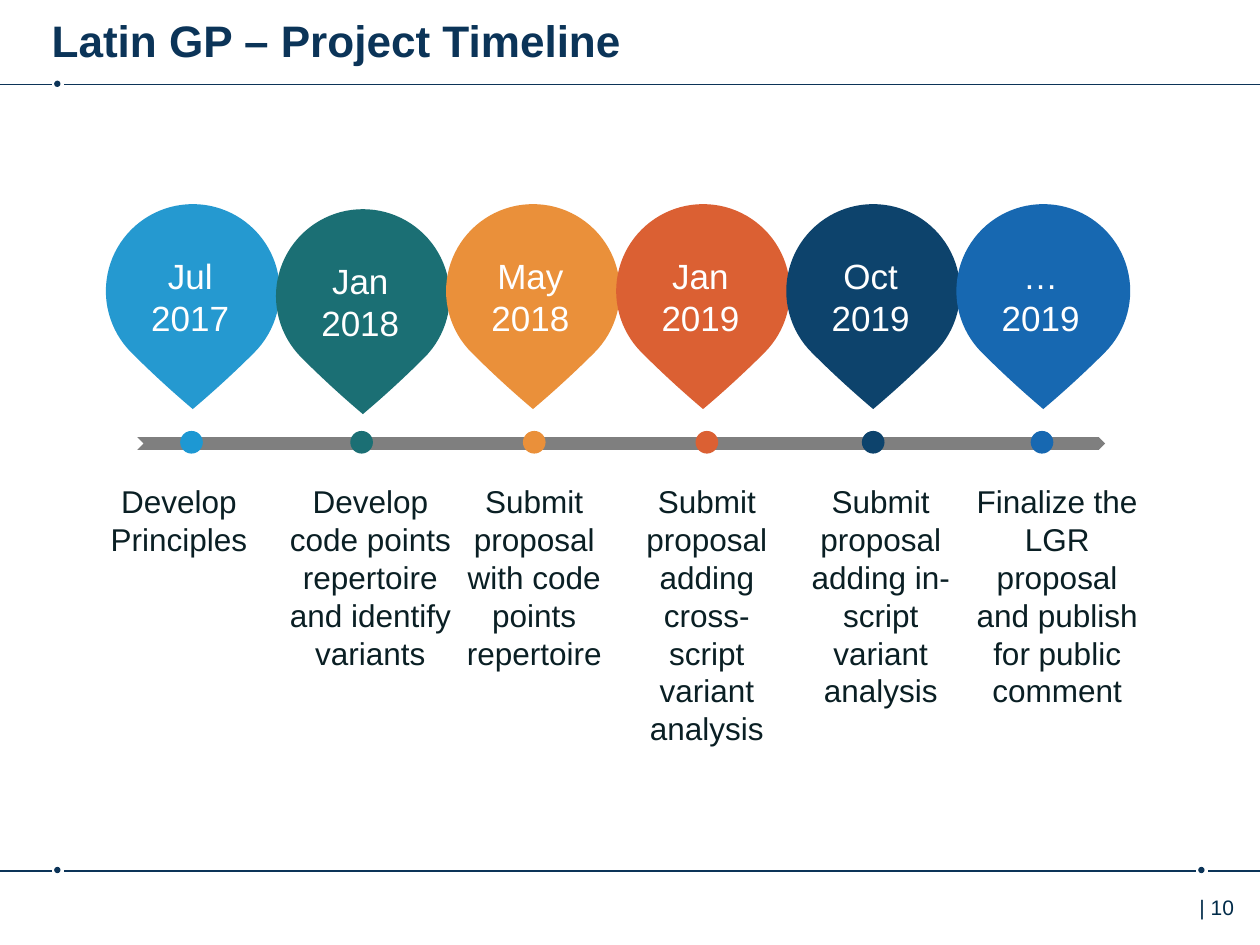
"""Builds the Latin GP project timeline slide."""
from lxml import etree
from pptx import Presentation
from pptx.dml.color import RGBColor
from pptx.enum.shapes import MSO_CONNECTOR, MSO_SHAPE
from pptx.enum.text import MSO_ANCHOR, MSO_AUTO_SIZE, PP_ALIGN
from pptx.oxml.ns import qn
from pptx.util import Inches, Pt

OVAL, DROP, BAR = MSO_SHAPE.OVAL, MSO_SHAPE.TEAR, MSO_SHAPE.CHEVRON
LINE = MSO_CONNECTOR.STRAIGHT
LEFT, MID = PP_ALIGN.LEFT, PP_ALIGN.CENTER
TOP, FIXED = MSO_ANCHOR.TOP, MSO_AUTO_SIZE.NONE
WIDE, HIGH = 10, 7.5
NAVY, INK = "0C3458", "0A1F24"
PIN, STEP, START = 1.38, 1.35, 0.84
DOT = 0.18

# month, year, pin fill, dot fill, pin top, dot left, label left, label width, label
STAGES = [
    ("Jul", "2017", "2599D0", "1D98D3", 1.62, 1.43, 0.66, 1.52,
     "Develop Principles"),
    ("Jan", "2018", "1B6F74", "1B6F74", 1.66, 2.78, 2.16, 1.56,
     "Develop code points repertoire and identify variants"),
    ("May", "2018", "EA903A", "EA903A", 1.62, 4.15, 3.59, 1.3,
     "Submit proposal with code points repertoire"),
    ("Jan", "2019", "DB6033", "DB6033", 1.62, 5.52, 4.96, 1.3,
     "Submit proposal adding cross-script variant analysis"),
    ("Oct", "2019", "0D436C", "0D436C", 1.62, 6.84, 6.34, 1.3,
     "Submit proposal adding in-script variant analysis"),
    ("…", "2019", "1768B1", "1768B1", 1.62, 8.18, 7.63, 1.52,
     "Finalize the LGR proposal and publish for public comment"),
]


def tint(code):
    """Turn a hex string into a colour."""
    return RGBColor.from_string(code)


def place(item, x, y, w, h):
    """Set position and size in inches."""
    item.left, item.top = Inches(x), Inches(y)
    item.width, item.height = Inches(w), Inches(h)


def write(frame, text, size=18, color=INK, bold=False, align=MID, side=0.09):
    """Fill a text frame, one paragraph per line of text."""
    frame.word_wrap, frame.auto_size = True, FIXED
    frame.vertical_anchor = TOP
    frame.margin_left = frame.margin_right = Inches(side)
    frame.margin_top = frame.margin_bottom = Inches(0.05)
    frame.text = text
    for para in frame.paragraphs:
        para.alignment = align
        para.line_spacing = Pt(round(size * 1.2, 1))
        font = para.runs[0].font
        font.name, font.size, font.bold = "Arial", Pt(size), bold
        font.color.rgb = tint(color)


def label(slide, text, x, y, w, h, **style):
    """Add a text box."""
    box = slide.shapes.add_textbox(Inches(x), Inches(y), Inches(w), Inches(h))
    write(box.text_frame, text, **style)


def shape(slide, kind, x, y, w, h, fill):
    """Add a plain filled shape."""
    item = slide.shapes.add_shape(
        kind, Inches(x), Inches(y), Inches(w), Inches(h))
    item.shadow.inherit = False
    item.fill.solid()
    item.fill.fore_color.rgb = tint(fill)
    item.line.fill.background()
    return item


def rule(slide, y, stops):
    """Draw a full-width line broken by a small dot at each stop."""
    ends = [0]
    for mid in stops:
        shape(slide, OVAL, mid - 0.03, y - 0.03, 0.05, 0.05, NAVY)
        ends += [mid - 0.05, mid + 0.05]
    ends.append(WIDE)
    for a, b in zip(ends[::2], ends[1::2]):
        line = slide.shapes.add_connector(
            LINE, Inches(a), Inches(y), Inches(b), Inches(y))
        line.line.color.rgb, line.line.width = tint(NAVY), Pt(1)
        etree.SubElement(line._element.spPr, qn("a:effectLst"))


def stage(slide, col, data):
    """Add one pin with its date, dot and label."""
    month, year, fill, spot, top, dot, left, width, text = data
    x = START + col * STEP
    pin = shape(slide, DROP, x, top, PIN, PIN, fill)
    pin.rotation, pin.adjustments[0] = 135, 0.96
    label(slide, f"{month}\n{year}", x + 0.02, top + 0.35, 1.3, 0.71,
          size=20, color="FFFFFF")
    shape(slide, OVAL, dot, 3.42, DOT, DOT, spot)
    label(slide, text, left, 3.78, width, 1.72)


def main():
    """Build and save the slide."""
    deck = Presentation()
    deck.slide_width, deck.slide_height = Inches(WIDE), Inches(HIGH)
    slide = deck.slides.add_slide(deck.slide_layouts[5])
    rule(slide, 0.67, [0.46])
    rule(slide, 6.91, [0.46, 9.54])
    label(slide, "| 10", 9.43, 7.05, 0.57, 0.4,
          size=12, color="002B49", align=LEFT)
    title = slide.shapes.title
    place(title, 0.41, 0.06, 8.76, 0.49)
    write(title.text_frame, "Latin GP – Project Timeline", size=25.2,
          color="0B3458", bold=True, align=LEFT, side=0)
    shape(slide, BAR, 1.09, 3.47, 7.68, 0.1, "7F7F7F")
    for col, data in enumerate(STAGES):
        stage(slide, col, data)
    deck.save("out.pptx")


if __name__ == "__main__":
    main()
